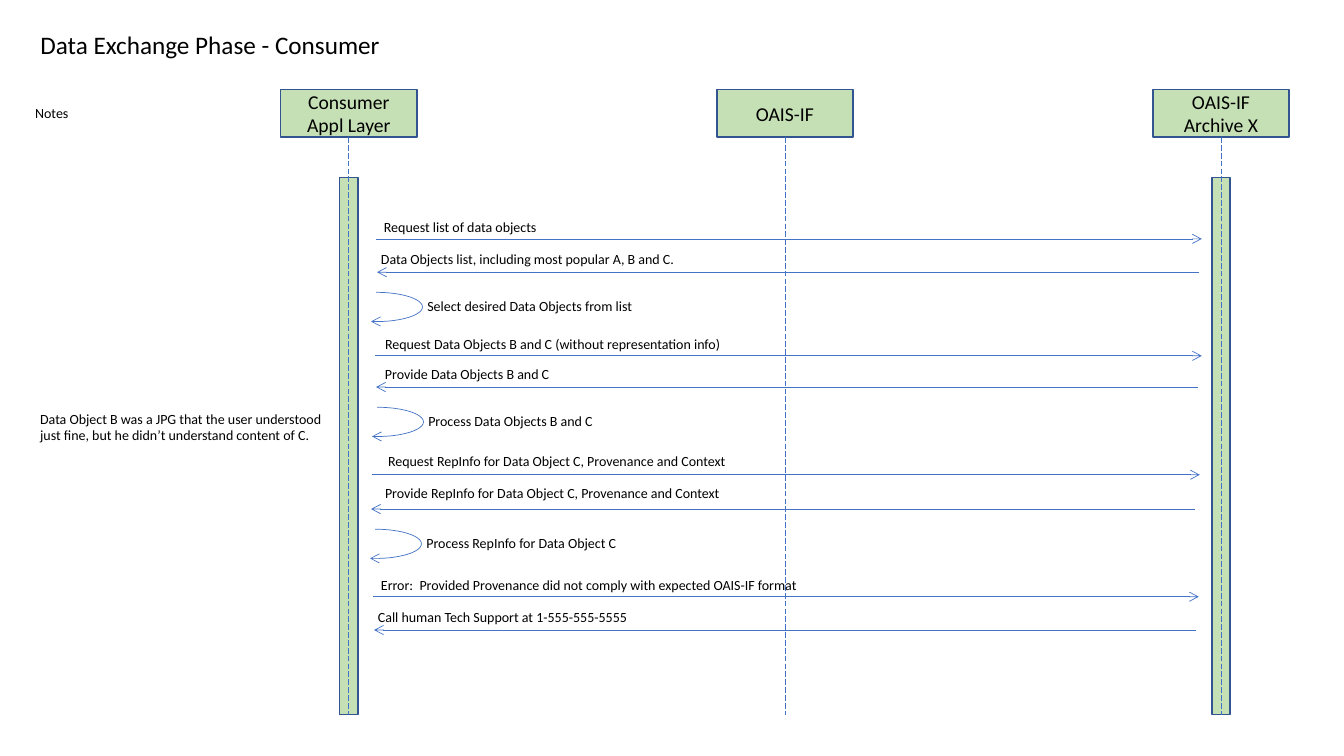
from dataclasses import dataclass

from lxml import etree
from pptx import Presentation
from pptx import util as u
from pptx.dml.color import RGBColor
from pptx.enum import dml, shapes, text
from pptx.oxml import ns

COLORS = {"fill": "C5E0B4", "border": "325491", "line": "4472C4", "text": "000000"}
FONT = "Calibri"
FIRST_X, LANE_STEP = 3.46, 4.325
HEAD_TOP, HEAD_WIDTH, HEAD_HEIGHT = 0.89, 1.35, 0.47
BAR_TOP, BAR_WIDTH, LANE_BOTTOM = 1.76, 0.18, 7.09
LABEL_HEIGHT = 0.27
LOOP_WIDTH, LOOP_HEIGHT, LOOP_LABEL_OFFSET = 0.92, 0.29, 0.87


@dataclass
class Lane:
    name: str
    active: bool


@dataclass
class Label:
    words: str
    left: float
    top: float
    width: float
    height: float = LABEL_HEIGHT
    wraps: bool = False


@dataclass
class Message:
    start: float
    end: float
    y: float
    label: Label


@dataclass
class SelfCall:
    words: str
    left: float
    top: float
    label_width: float


LANES = [
    Lane("Consumer Appl Layer", True),
    Lane("OAIS-IF", False),
    Lane("OAIS-IF Archive X", True),
]
MESSAGES = [
    Message(3.73, 11.92, 2.37, Label("Request list of data objects", 3.71, 2.12, 1.74)),
    Message(11.89, 3.74, 2.7,
            Label("Data Objects list, including most popular A, B and C.", 3.68, 2.44, 3.21)),
    Message(3.72, 11.92, 3.53,
            Label("Request Data Objects B and C (without representation info)", 3.72, 3.28, 3.59)),
    Message(11.88, 3.73, 3.84, Label("Provide Data Objects B and C", 3.72, 3.58, 1.86)),
    Message(3.69, 11.9, 4.71,
            Label("Request RepInfo for Data Object C, Provenance and Context", 3.75, 4.44, 3.62)),
    Message(11.85, 3.68, 5.05,
            Label("Provide RepInfo for Data Object C, Provenance and Context", 3.72, 4.76, 3.58)),
    Message(3.7, 11.89, 5.92,
            Label("Error:  Provided Provenance did not comply with expected OAIS-IF format",
                  3.68, 5.67, 4.39)),
    Message(11.86, 3.71, 6.25,
            Label("Call human Tech Support at 1-555-555-5555", 3.65, 5.99, 2.72)),
]
SELF_CALLS = [
    SelfCall("Select desired Data Objects from list", 3.27, 2.9, 2.27),
    SelfCall("Process Data Objects B and C", 3.28, 4.04, 1.86),
    SelfCall("Process RepInfo for Data Object C", 3.26, 5.25, 2.12),
]
NOTES = [
    Label("Notes", 0.25, 0.99, 2.32, 0.56, True),
    Label("Data Object B was a JPG that the user understood just fine, "
          "but he didn’t understand content of C.", 0.3, 4.02, 3.03, 0.56, True),
]


def color(name: str) -> RGBColor:
    return RGBColor.from_string(COLORS[name])


def write(frame, words: str, size: float, align=text.PP_ALIGN.LEFT) -> None:
    frame.text = words
    para = frame.paragraphs[0]
    para.alignment = align
    for span in para.runs:
        span.font.name = FONT
        span.font.size = u.Pt(size)
        span.font.color.rgb = color("text")


def style_line(line, name: str, width: float) -> None:
    line.color.rgb = color(name)
    line.width = u.Pt(width)


def add_arrowhead(shape) -> None:
    """Put an open arrowhead at the end of a shape's already styled outline."""
    outline = shape._element.spPr.find(ns.qn("a:ln"))
    etree.SubElement(outline, ns.qn("a:tailEnd")).set("type", "arrow")


def add_line(page, x1: float, y1: float, x2: float, y2: float):
    line = page.shapes.add_connector(
        shapes.MSO_CONNECTOR.STRAIGHT,
        u.Inches(x1), u.Inches(y1), u.Inches(x2), u.Inches(y2))
    style_line(line.line, "line", 0.5)
    etree.SubElement(line._element.spPr, ns.qn("a:effectLst"))
    return line


def add_box(page, left: float, top: float, width: float, height: float):
    box = page.shapes.add_shape(
        shapes.MSO_SHAPE.RECTANGLE,
        u.Inches(left), u.Inches(top), u.Inches(width), u.Inches(height))
    box.shadow.inherit = False
    box.fill.solid()
    box.fill.fore_color.rgb = color("fill")
    style_line(box.line, "border", 1)
    return box


def add_label(page, label: Label) -> None:
    box = page.shapes.add_textbox(
        u.Inches(label.left), u.Inches(label.top),
        u.Inches(label.width), u.Inches(label.height))
    frame = box.text_frame
    frame.word_wrap = label.wraps
    if not label.wraps:
        frame.auto_size = text.MSO_AUTO_SIZE.SHAPE_TO_FIT_TEXT
    write(frame, label.words, 10)


def add_lane(page, lane: Lane, x: float) -> None:
    if lane.active:
        add_box(page, x - BAR_WIDTH / 2, BAR_TOP, BAR_WIDTH, LANE_BOTTOM - BAR_TOP)
    head = add_box(page, x - HEAD_WIDTH / 2, HEAD_TOP, HEAD_WIDTH, HEAD_HEIGHT)
    head.text_frame.word_wrap = True
    head.text_frame.vertical_anchor = text.MSO_ANCHOR.MIDDLE
    write(head.text_frame, lane.name, 14, text.PP_ALIGN.CENTER)
    lifeline = add_line(page, x, HEAD_TOP + HEAD_HEIGHT, x, LANE_BOTTOM)
    lifeline.line.dash_style = dml.MSO_LINE.LONG_DASH


def add_message(page, message: Message) -> None:
    arrow = add_line(page, message.start, message.y, message.end, message.y)
    add_arrowhead(arrow)
    add_label(page, message.label)


def add_self_call(page, call: SelfCall) -> None:
    loop = page.shapes.add_shape(
        shapes.MSO_SHAPE.ARC, u.Inches(call.left), u.Inches(call.top),
        u.Inches(LOOP_WIDTH), u.Inches(LOOP_HEIGHT))
    loop.adjustments[0] = 162
    loop.adjustments[1] = 65.43
    loop.shadow.inherit = False
    loop.fill.background()
    style_line(loop.line, "line", 0.5)
    add_arrowhead(loop)
    add_label(page, Label(call.words, call.left + LOOP_LABEL_OFFSET, call.top, call.label_width))


def add_title(page, words: str) -> None:
    title = page.shapes.title
    title.left, title.top = u.Inches(0.3), u.Inches(0.24)
    title.width, title.height = u.Inches(4.6), u.Inches(0.4)
    frame = title.text_frame
    frame.word_wrap = True
    frame.auto_size = text.MSO_AUTO_SIZE.SHAPE_TO_FIT_TEXT
    frame.vertical_anchor = text.MSO_ANCHOR.TOP
    write(frame, words, 18)


def main() -> None:
    deck = Presentation()
    deck.slide_width, deck.slide_height = u.Inches(13.33), u.Inches(7.5)
    page = deck.slides.add_slide(deck.slide_layouts.get_by_name("Title Only"))
    add_title(page, "Data Exchange Phase - Consumer")
    for index, lane in enumerate(LANES):
        add_lane(page, lane, FIRST_X + index * LANE_STEP)
    for message in MESSAGES:
        add_message(page, message)
    for call in SELF_CALLS:
        add_self_call(page, call)
    for note in NOTES:
        add_label(page, note)
    deck.save("out.pptx")


if __name__ == "__main__":
    main()
